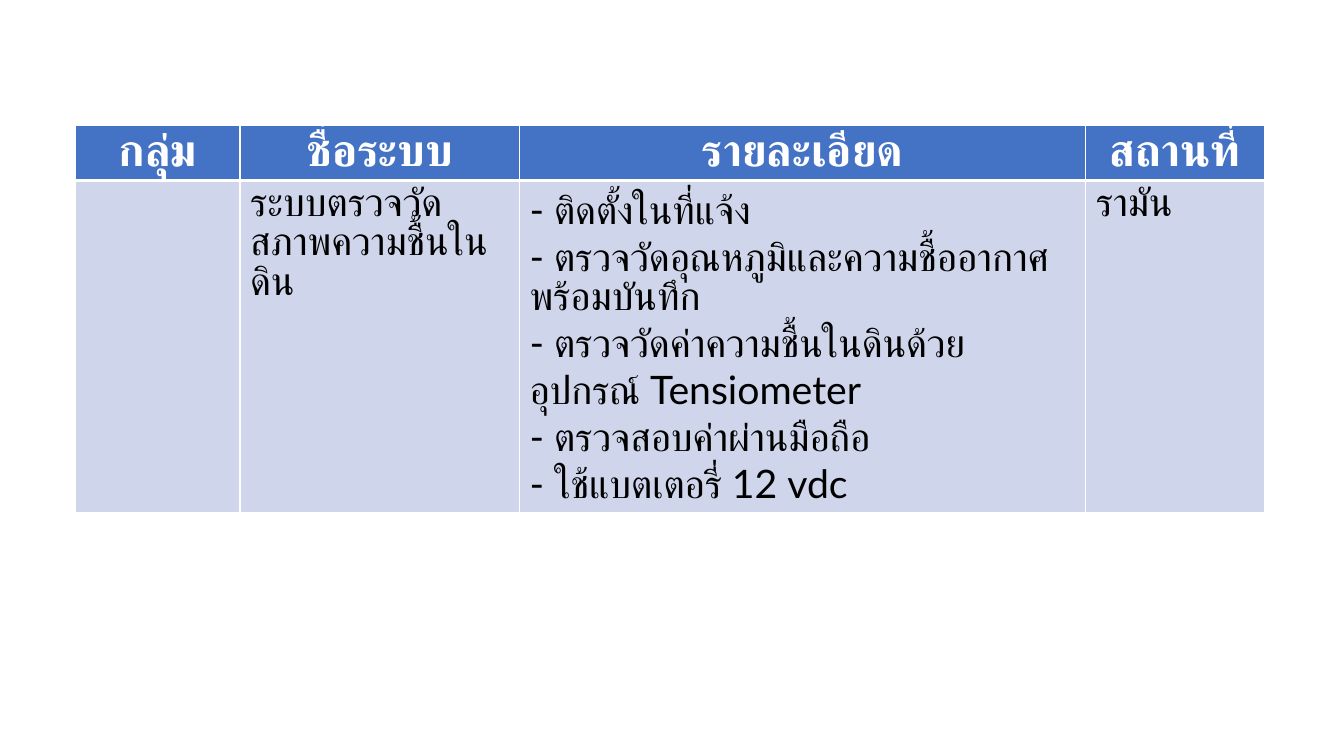
from lxml import etree
from pptx import Presentation
from pptx import util as u
from pptx.dml.color import RGBColor
from pptx.enum import lang, text
from pptx.oxml import ns

WHITE = RGBColor(0xFF, 0xFF, 0xFF)
BLACK = RGBColor(0x00, 0x00, 0x00)
HEADER_BLUE = RGBColor(0x44, 0x72, 0xC4)
BODY_BLUE = RGBColor(0xCF, 0xD5, 0xEA)

HEADERS = ["กลุ่ม", "ชื่อระบบ", "รายละเอียด", "สถานที่"]
DETAILS = [
    "- ติดตั้งในที่แจ้ง",
    "- ตรวจวัดอุณหภูมิและความชื้ออากาศพร้อมบันทึก",
    "- ตรวจวัดค่าความชื้นในดินด้วยอุปกรณ์ Tensiometer",
    "- ตรวจสอบค่าผ่านมือถือ",
    "- ใช้แบตเตอรี่ 12 vdc",
]
BODY = [[], ["ระบบตรวจวัดสภาพความชื้นในดิน"], DETAILS, ["รามัน"]]


def set_borders(cell, widths):
    """Draw white cell borders; widths are points by side."""
    tcPr = cell._tc.get_or_add_tcPr()
    for i, (side, width) in enumerate(widths.items()):
        ln = etree.Element(ns.qn(f"a:ln{side}"), w=str(u.Pt(width)))
        fill = etree.SubElement(ln, ns.qn("a:solidFill"))
        etree.SubElement(fill, ns.qn("a:srgbClr"), val=str(WHITE))
        tcPr.insert(i, ln)


def fill_cell(cell, lines, size, color, bold, align):
    tf = cell.text_frame
    for i, line in enumerate(lines):
        p = tf.add_paragraph() if i else tf.paragraphs[0]
        p.alignment = align
        r = p.add_run()
        r.text = line
        r.font.name = "Lato"
        r.font.size = u.Pt(size)
        r.font.bold = bold
        r.font.color.rgb = color
        r.font.language_id = lang.MSO_LANGUAGE_ID.THAI


prs = Presentation()
prs.slide_width, prs.slide_height = u.Cm(33.87), u.Cm(19.05)
s = prs.slides.add_slide(prs.slide_layouts[6])

# Table grid
tbl = s.shapes.add_table(2, 4, u.Cm(1.91), u.Cm(3.16), u.Cm(29.97), u.Cm(9.7)).table
for col, width in zip(tbl.columns, [4.14, 7.04, 14.27, 4.52]):
    col.width = u.Cm(width)
for row, height in zip(tbl.rows, [1.39, 8.31]):
    row.height = u.Cm(height)

# Header and body cells
for c, (header, lines) in enumerate(zip(HEADERS, BODY)):
    head, body = tbl.cell(0, c), tbl.cell(1, c)
    fill_cell(head, [header], 32, WHITE, True, text.PP_ALIGN.CENTER)
    fill_cell(body, lines, 28, BLACK, False, text.PP_ALIGN.LEFT)
    for cell, color, top, bottom in [(head, HEADER_BLUE, 1, 3), (body, BODY_BLUE, 3, 1)]:
        cell.fill.solid()
        cell.fill.fore_color.rgb = color
        set_borders(cell, {"L": 1, "R": 1, "T": top, "B": bottom})

prs.save("out.pptx")
